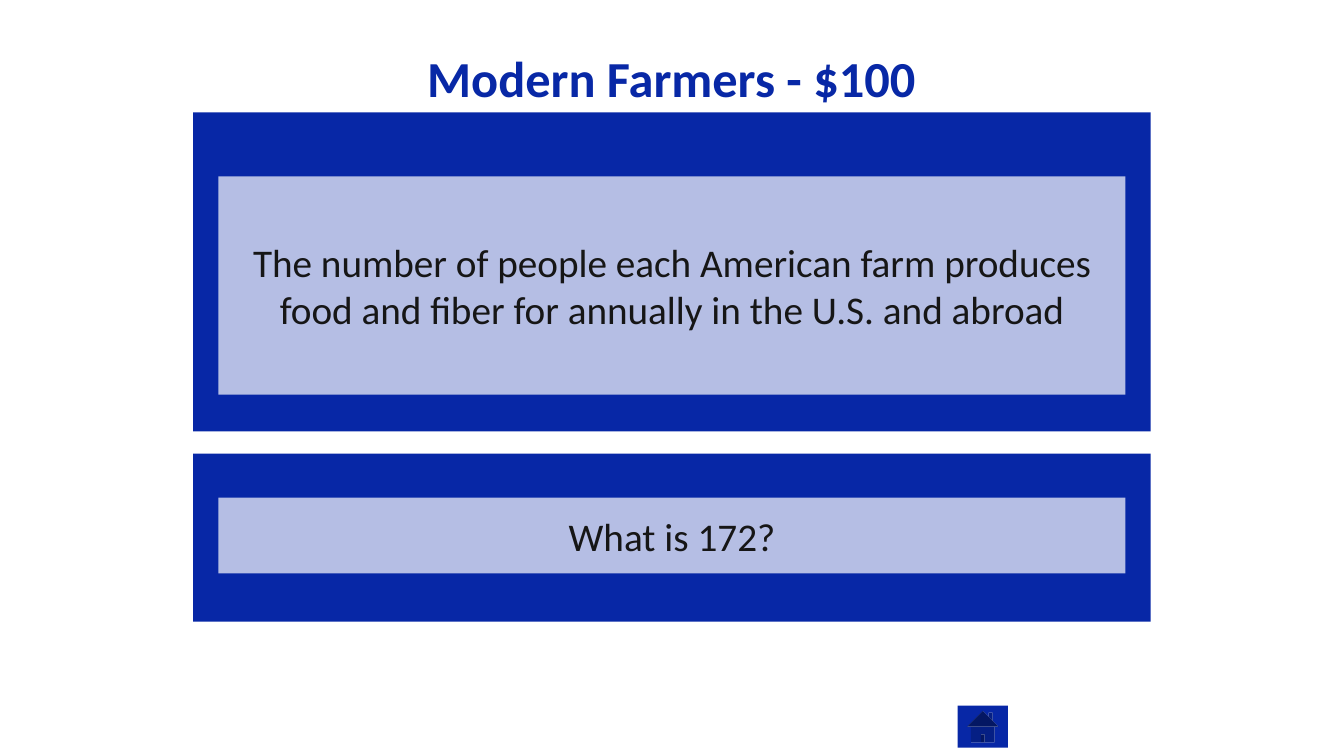
from lxml import etree
from pptx import Presentation
from pptx.dml.color import RGBColor
from pptx.enum.shapes import MSO_SHAPE
from pptx.enum.text import MSO_ANCHOR, MSO_AUTO_SIZE, PP_ALIGN
from pptx.oxml.ns import qn
from pptx.util import Pt

RECT = MSO_SHAPE.RECTANGLE
HOME = MSO_SHAPE.ACTION_BUTTON_HOME
TOP, MIDDLE = MSO_ANCHOR.TOP, MSO_ANCHOR.MIDDLE
CENTER = PP_ALIGN.CENTER
FIXED = MSO_AUTO_SIZE.NONE

PX = 9525
WIDE, HIGH = 1280, 720
NAVY, BLUE, INK, WHITE = "0727A6", "0828A6", "161616", "FFFFFF"
FONT = "Calibri"

QUERY = ("The number of people each American farm produces "
         "food and fiber for annually in the U.S. and abroad")
REPLY = "What is 172?"


def px(*sizes):
    return [size * PX for size in sizes]


def color(code):
    return RGBColor.from_string(code)


def write(shape, text, size=28, ink=INK, bold=False, anchor=MIDDLE):
    frame = shape.text_frame
    frame.word_wrap = True
    frame.auto_size = FIXED
    frame.vertical_anchor = anchor
    line = frame.paragraphs[0]
    line.alignment = CENTER
    run = line.add_run()
    run.text = text
    font = run.font
    font.name, font.size, font.bold = FONT, Pt(size), bold
    font.color.rgb = color(ink)


def block(slide, box, fill, kind=RECT, alpha=None):
    """Add a borderless shape; alpha is its opacity in percent."""
    shape = slide.shapes.add_shape(kind, *px(*box))
    shape.shadow.inherit = False
    shape.line.fill.background()
    shape.fill.solid()
    shape.fill.fore_color.rgb = color(fill)
    if alpha is not None:
        tint = shape.fill._xPr.find(".//" + qn("a:srgbClr"))
        etree.SubElement(tint, qn("a:alpha")).set("val", str(alpha * 1000))
    return shape


def head(slide, text, box):
    title = slide.shapes.title
    title.left, title.top, title.width, title.height = px(*box)
    frame = title.text_frame
    frame.margin_left = frame.margin_right = 0
    frame.margin_top = frame.margin_bottom = 0
    write(title, text, size=36, ink=BLUE, bold=True, anchor=TOP)


def card(slide, text, outer, inner):
    """Add a navy panel with a pale text plate; each span is (top, height)."""
    for (top, high), left, fill, alpha in (
            (outer, 184, NAVY, None), (inner, 208, WHITE, 70)):
        shape = block(slide, (left, top, WIDE - 2 * left, high),
                      fill, alpha=alpha)
    write(shape, text)


def main():
    deck = Presentation()
    deck.slide_width, deck.slide_height = px(WIDE, HIGH)
    slide = deck.slides.add_slide(deck.slide_layouts[5])
    head(slide, "Modern Farmers - $100", (23, 45, 1233, 89))
    card(slide, QUERY, (107, 304), (168, 208))
    card(slide, REPLY, (432, 160), (474, 72))
    block(slide, (912, 672, 48, 40), NAVY, kind=HOME)
    deck.save("out.pptx")


if __name__ == "__main__":
    main()
